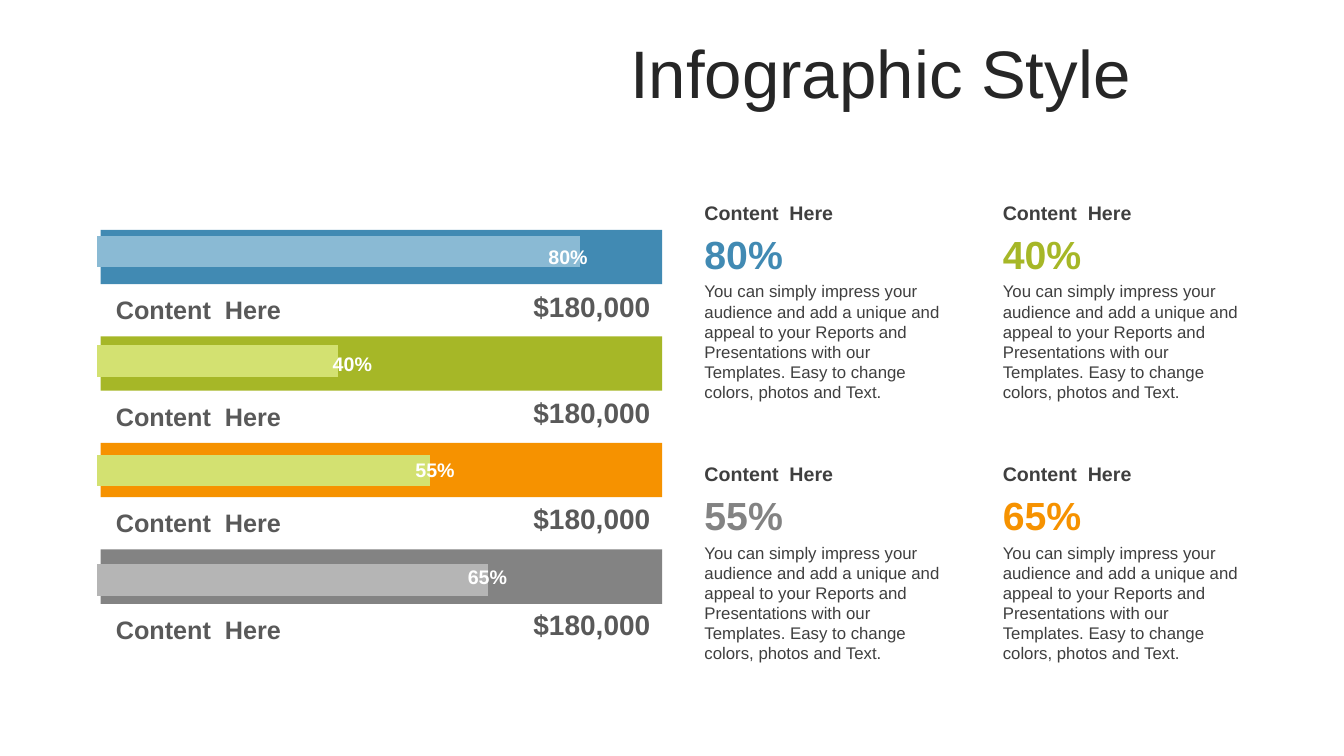
from dataclasses import dataclass

from lxml import etree
from pptx import Presentation
from pptx.chart.data import CategoryChartData as ChartData
from pptx.dml.color import RGBColor as Color
from pptx.enum.chart import XL_CHART_TYPE as Kind
from pptx.enum.shapes import MSO_SHAPE as Shape
from pptx.enum.text import MSO_ANCHOR as Anchor, MSO_AUTO_SIZE as Fit, PP_ALIGN as Align
from pptx.oxml.ns import qn
from pptx.util import Inches, Pt


@dataclass(frozen=True)
class Theme:
    font: str = "Arial"
    blue: str = "418AB3"
    green: str = "A6B727"
    orange: str = "F69200"
    gray: str = "838383"
    ink: str = "262626"
    text: str = "3F3F3F"
    soft: str = "595959"
    white: str = "FFFFFF"
    black: str = "000000"
    dark: str = "404040"
    tints: tuple = ("B5B5B5", "D3E171", "D3E171", "8ABAD4")
    title: int = 48
    big: int = 28
    price: int = 20
    label: int = 18
    small: int = 14
    body: int = 12


T = Theme()
WIDE, HIGH = Inches(13.33), Inches(7.5)
HEAD = "Content  Here"
BODY = ("You can simply impress your audience and add a unique and appeal to your "
        "Reports and Presentations with our Templates. Easy to change colors, "
        "photos and Text.")
STEP = 14.09
BARS = [("80%", 39.53, T.blue), ("40%", 23.48, T.green),
        ("55%", 29.63, T.orange), ("65%", 33.53, T.gray)]
CARDS = [("80%", T.blue), ("40%", T.green), ("55%", T.gray), ("65%", T.orange)]


def place(x, y, w, h):
    return [int(side * share / 100) for side, share in
            ((WIDE, x), (HIGH, y), (WIDE, w), (HIGH, h))]


def paint(fill, tone):
    fill.solid()
    fill.fore_color.rgb = Color.from_string(tone)


def style(font, size, tone, bold=False):
    font.name = T.font
    font.size = Pt(size)
    font.bold = bold
    font.color.rgb = Color.from_string(tone)


def write(shapes, spot, text, size, tone, bold=True, align=Align.LEFT,
          anchor=Anchor.MIDDLE, fit=Fit.SHAPE_TO_FIT_TEXT):
    frame = shapes.add_textbox(*place(*spot)).text_frame
    frame.text = text
    frame.word_wrap = True
    frame.auto_size = fit
    frame.vertical_anchor = anchor
    line = frame.paragraphs[0]
    line.alignment = align
    style(line.runs[0].font, size, tone, bold)
    return line


def add_card(shapes, x, y, share, tone):
    group = shapes.add_group_shape().shapes
    write(group, (x, y, 19.8, 4.53), HEAD, T.small, T.text)
    write(group, (x, y + 10.67, 19.73, 17.47), BODY, T.body, T.text,
          bold=False, anchor=Anchor.TOP)
    write(group, (x, y + 3.87, 19.73, 7.6), share, T.big, tone)


def add_bar(shapes, y, tone):
    bar = shapes.add_shape(Shape.RECTANGLE, *place(7.5, y, 41.78, 7.2))
    bar.shadow.inherit = False
    paint(bar.fill, tone)
    bar.line.fill.background()


def set_plot(chart, **shares):
    area = chart.plots[0]._element.getparent()
    for old in area.findall(qn("c:layout")):
        area.remove(old)
    layout = etree.Element(qn("c:layout"))
    area.insert(0, layout)
    inner = etree.SubElement(layout, qn("c:manualLayout"))
    modes = {"layoutTarget": "inner", "xMode": "edge", "yMode": "edge"}
    for name, value in {**modes, **shares}.items():
        etree.SubElement(inner, qn("c:" + name)).set("val", str(value))


def add_chart(shapes):
    data = ChartData()
    data.categories = ["1", "2", "3", "4"]
    data.add_series("Series 1", (81, 69, 50, 100))
    chart = shapes.add_chart(Kind.BAR_STACKED, *place(6.38, 24.8, 42, 60.4), data).chart
    chart.has_legend = False
    chart.has_title = False
    style(chart.font, T.label, T.black)
    chart.category_axis.visible = False
    axis = chart.value_axis
    axis.visible = False
    axis.has_major_gridlines = False
    axis.minimum_scale, axis.maximum_scale = 0, 100
    plot = chart.plots[0]
    plot.vary_by_categories = False
    plot.gap_width, plot.overlap = 250, 100
    series = plot.series[0]
    paint(series.format.fill, T.dark)
    for spot, tint in enumerate(T.tints):
        paint(series.points[spot].format.fill, tint)
    set_plot(chart, x=0.02, y=0.02, w=0.855, h=0.96)


def main():
    deck = Presentation()
    deck.slide_width, deck.slide_height = WIDE, HIGH
    shapes = deck.slides.add_slide(deck.slide_layouts[6]).shapes

    title = write(shapes, (33.5, 4.93, 64.05, 10.53), "Infographic Style", T.title,
                  T.ink, bold=False, align=Align.CENTER, fit=Fit.NONE)
    title.line_spacing = 0.9

    for spot, (share, tone) in enumerate(CARDS):
        row, col = divmod(spot, 2)
        add_card(shapes, 51.68 + 22.2 * col, 25.87 + 34.53 * row, share, tone)

    for row, (share, x, tone) in enumerate(BARS):
        add_bar(shapes, 30.4 + STEP * row, tone)
    add_chart(shapes)

    for row, (share, x, tone) in enumerate(BARS):
        drop = STEP * row
        write(shapes, (7.88, 38.3 + drop, 16.5, 4), HEAD, T.label, T.soft,
              anchor=Anchor.TOP)
        write(shapes, (38.1, 37.6 + 14 * row, 11.03, 5.87), "$180,000", T.price,
              T.soft, align=Align.RIGHT)
        write(shapes, (x, 31.7 + drop, 5.48, 4.53), share, T.small, T.white,
              align=Align.CENTER)

    deck.save("out.pptx")


if __name__ == "__main__":
    main()
